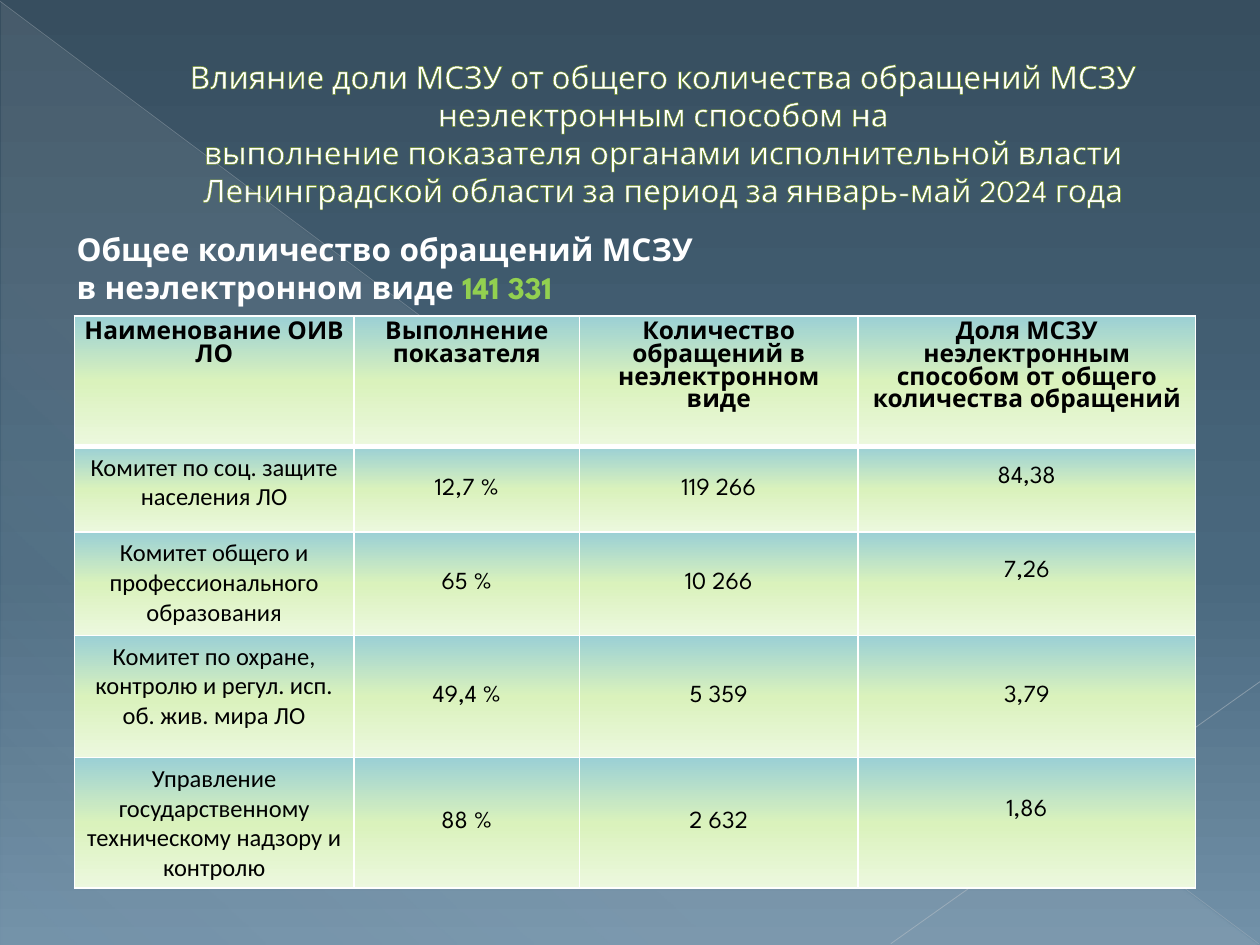
"""Build a slide with a table of non-electronic service requests by authority."""
from dataclasses import dataclass

from lxml import etree
from pptx import Presentation
from pptx import util as u
from pptx.dml.color import RGBColor
from pptx.enum import shapes, text
from pptx.oxml import parse_xml
from pptx.oxml.ns import nsdecls, qn

COLORS = {
    "white": "FFFFFF", "black": "000000", "accent": "92D050", "outline": "698A18",
    "sheen": "E7ECED", "diagonal": "BAC0C6", "corner": "C2C7CC",
}
BACKGROUND = [(0, "374E5F", 100), (60, "49687E", 100), (100, "7291A8", 100)]
SHEEN = [(0, COLORS["sheen"], 10), (70, COLORS["sheen"], 8), (100, COLORS["sheen"], 1)]
CELL = [(0, "9BD0D5", 100), (50, "DAF2BC", 100), (100, "ECF8DE", 100)]
HEAD_FONT, BODY_FONT = "League Spartan", "Calibri"
COLUMNS = [2.22, 1.79, 2.21, 2.68]
ROWS = [1.03, 0.68, 0.82, 0.97, 1.03]
HEADERS = ["Наименование ОИВ ЛО", "Выполнение показателя",
           "Количество обращений в неэлектронном виде",
           "Доля МСЗУ неэлектронным способом от общего количества обращений"]


@dataclass
class Authority:
    name: str
    result: str
    requests: str
    share: str
    share_bottom: float = 0.24


@dataclass
class Line:
    start: tuple
    end: tuple
    color: str
    width: float
    alpha: int


AUTHORITIES = [
    Authority("Комитет по соц. защите населения ЛО", "12,7 %", "119 266", "84,38"),
    Authority("Комитет общего и профессионального образования", "65 %", "10 266", "7,26"),
    Authority("Комитет по охране, контролю и регул. исп. об. жив. мира ЛО",
              "49,4 %", "5 359", "3,79", 0.05),
    Authority("Управление государственному техническому надзору и контролю",
              "88 %", "2 632", "1,86"),
]
LINES = [
    Line((0, 0.01), (9.99, 7.49), "diagonal", 0.39, 35),
    Line((10, 5.41), (7.07, 7.49), "corner", 0.47, 45),
]


def rgb(name: str) -> RGBColor:
    return RGBColor.from_string(COLORS[name])


def gradient(stops: list, angle: int):
    items = "".join(
        f'<a:gs pos="{pos * 1000}"><a:srgbClr val="{color}">'
        f'<a:alpha val="{alpha * 1000}"/></a:srgbClr></a:gs>'
        for pos, color, alpha in stops)
    return parse_xml(f'<a:gradFill {nsdecls("a")} rotWithShape="1"><a:gsLst>{items}</a:gsLst>'
                     f'<a:lin ang="{angle * 60000}" scaled="0"/></a:gradFill>')


def set_font(font, size: float, name: str, color: str, bold: bool = False) -> None:
    font.size, font.name, font.bold = u.Pt(size), name, bold
    font.color.rgb = rgb(color)


def draw_background(s) -> None:
    s.background.fill.solid()
    fill = s.background._cSld.bg.bgPr.find(qn("a:solidFill"))
    fill.getparent().replace(fill, gradient(BACKGROUND, 90))
    sp = s.shapes.add_shape(shapes.MSO_SHAPE.RIGHT_TRIANGLE, u.Inches(0.01), u.Inches(0.02),
                            u.Inches(9.98), u.Inches(7.48))
    sp.shadow.inherit = False
    sp.line.fill.background()
    sp.fill.solid()
    fill = sp._element.spPr.find(qn("a:solidFill"))
    fill.getparent().replace(fill, gradient(SHEEN, 133))


def draw_line(s, line: Line) -> None:
    sp = s.shapes.add_connector(shapes.MSO_CONNECTOR.STRAIGHT,
                                *(u.Inches(v) for v in line.start + line.end))
    sp.line.color.rgb, sp.line.width = rgb(line.color), u.Pt(line.width)
    color = sp.line._ln.find(".//" + qn("a:srgbClr"))
    etree.SubElement(color, qn("a:alpha")).set("val", str(line.alpha * 1000))
    etree.SubElement(sp._element.spPr, qn("a:effectLst"))


def draw_title(s) -> None:
    sp = s.shapes.title
    sp.left, sp.top, sp.width, sp.height = (u.Inches(v) for v in (0.5, 0.29, 9, 1.53))
    tf = sp.text_frame
    tf.vertical_anchor = text.MSO_ANCHOR.MIDDLE
    tf.text = ("Влияние доли МСЗУ от общего количества обращений МСЗУ неэлектронным способом на\v"
               "выполнение показателя органами исполнительной власти "
               "Ленинградской области за период за январь-май 2024 года")
    p = tf.paragraphs[0]
    p.alignment = text.PP_ALIGN.CENTER
    p._p.get_or_add_pPr().set("marL", str(u.Inches(0.53)))
    set_font(p.font, 18, HEAD_FONT, "white")
    for r in p.runs:
        r._r.get_or_add_rPr().insert(0, parse_xml(
            f'<a:ln {nsdecls("a")} w="{u.Pt(0.5)}"><a:solidFill>'
            f'<a:srgbClr val="{COLORS["outline"]}"/></a:solidFill></a:ln>'))


def draw_total(s) -> None:
    sp = s.shapes.add_textbox(*(u.Inches(v) for v in (0.51, 1.78, 5.28, 0.71)))
    tf = sp.text_frame
    tf.word_wrap = True
    p = tf.paragraphs[0]
    set_font(p.font, 18, HEAD_FONT, "white", True)
    p.add_run().text = "Общее количество обращений МСЗУ в неэлектронном виде "
    r = p.add_run()
    r.text = "141 331"
    r.font.color.rgb = rgb("accent")


def format_cell(cell, value: str, font: str, header: bool, middle: bool) -> None:
    cell.text = value
    cell.margin_left = cell.margin_right = u.Inches(0.07)
    cell.vertical_anchor = text.MSO_ANCHOR.MIDDLE if middle else text.MSO_ANCHOR.TOP
    p = cell.text_frame.paragraphs[0]
    p.alignment = text.PP_ALIGN.CENTER
    set_font(p.font, 14, font, "black", header)
    pr = cell._tc.get_or_add_tcPr()
    for side in ("lnL", "lnR", "lnT", "lnB"):
        width = 3 if header and side == "lnB" else 1
        pr.append(parse_xml(
            f'<a:{side} {nsdecls("a")} w="{u.Pt(width)}"><a:solidFill>'
            f'<a:srgbClr val="{COLORS["white"]}"/></a:solidFill></a:{side}>'))
    pr.append(gradient(CELL, 90))


def draw_table(s) -> None:
    table = s.shapes.add_table(len(ROWS), len(COLUMNS), u.Inches(0.59), u.Inches(2.51),
                               u.Inches(sum(COLUMNS)), u.Inches(sum(ROWS))).table
    for column, width in zip(table.columns, COLUMNS):
        column.width = u.Inches(width)
    for row, height in zip(table.rows, ROWS):
        row.height = u.Inches(height)
    for j, value in enumerate(HEADERS):
        format_cell(table.cell(0, j), value, HEAD_FONT, True, False)
    for i, a in enumerate(AUTHORITIES, 1):
        for j, value in enumerate((a.name, a.result, a.requests, a.share)):
            format_cell(table.cell(i, j), value, HEAD_FONT if j else BODY_FONT, False, j > 0)
        table.cell(i, 3).margin_bottom = u.Inches(a.share_bottom)


def main() -> None:
    prs = Presentation()
    prs.slide_width, prs.slide_height = u.Inches(10), u.Inches(7.5)
    s = prs.slides.add_slide(prs.slide_layouts[5])
    draw_background(s)
    for line in LINES:
        draw_line(s, line)
    draw_title(s)
    draw_total(s)
    draw_table(s)
    prs.save("out.pptx")


if __name__ == "__main__":
    main()
